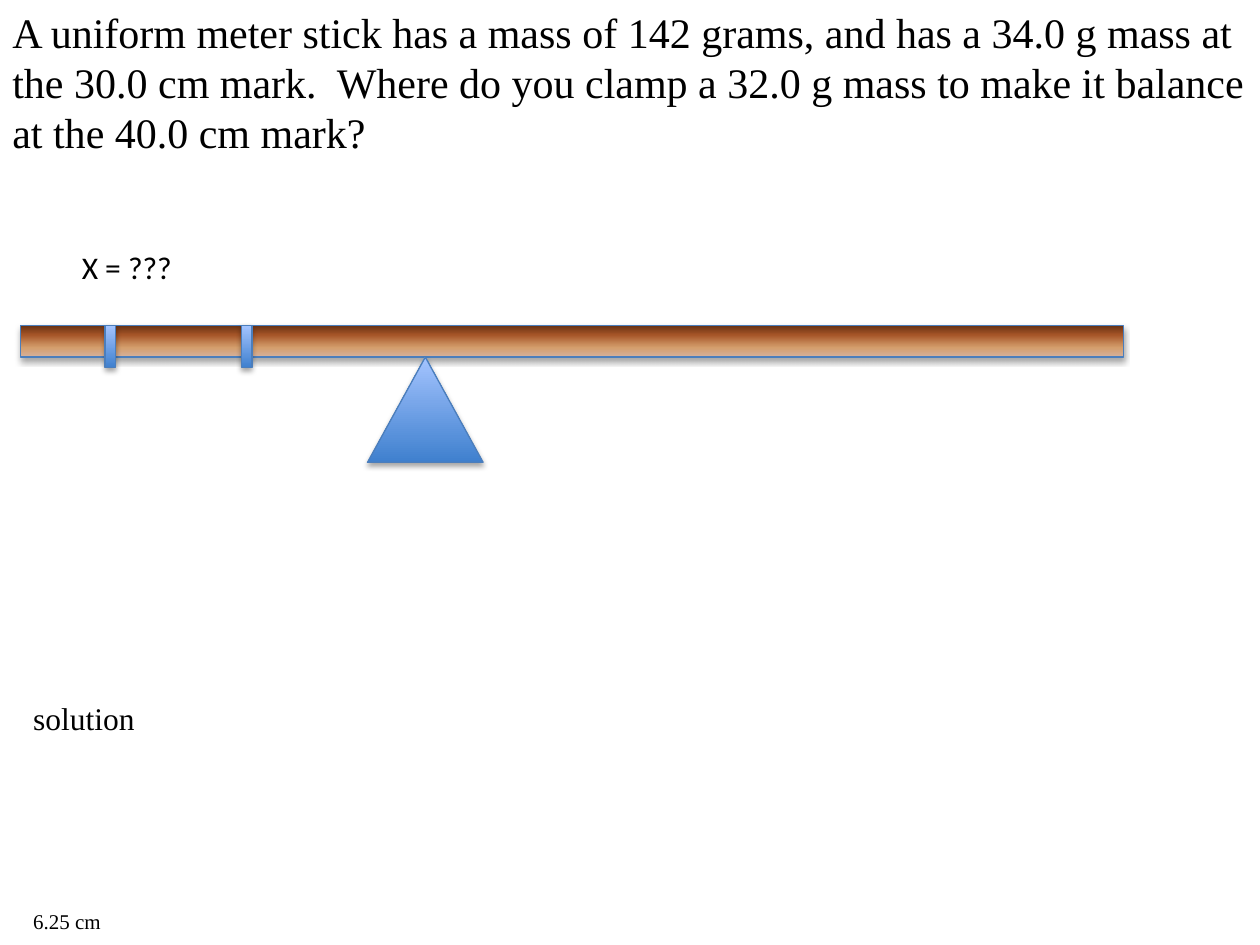
from lxml import etree
from pptx import Presentation
from pptx.dml.color import RGBColor
from pptx.enum import shapes, text
from pptx.oxml.ns import qn
from pptx.util import Cm, Pt

COLOURS = {"text": "000000", "outline": "4B7EBC", "shadow": "000000"}
GRADIENTS = {
    "wood": [(0, "D6B19C"), (30, "D49E6C"), (70, "A65528"), (100, "663012")],
    "blue": [(0, "3F80CE"), (100, "A4C4FF")],
}
SERIF = "Times New Roman"


def write_text(frame, content, *, size, font=SERIF, colour="text", wrap=True):
    frame.word_wrap = wrap
    frame.auto_size = text.MSO_AUTO_SIZE.SHAPE_TO_FIT_TEXT
    run = frame.paragraphs[0].add_run()
    run.text = content
    run.font.size = Pt(size)
    run.font.name = font
    run.font.color.rgb = RGBColor.from_string(COLOURS[colour])


def add_colour(parent, value):
    return etree.SubElement(parent, qn("a:srgbClr"), val=value)


class SlideBuilder:
    def __init__(self, slide):
        self.slide = slide

    def label(self, content, left, top, width, height, **style):
        box = self.slide.shapes.add_textbox(Cm(left), Cm(top), Cm(width), Cm(height))
        write_text(box.text_frame, content, **style)

    def solid(self, kind, gradient, left, top, width, height):
        shape = self.slide.shapes.add_shape(
            kind, Cm(left), Cm(top), Cm(width), Cm(height)
        )
        self.fill_gradient(shape, GRADIENTS[gradient])
        shape.line.color.rgb = RGBColor.from_string(COLOURS["outline"])
        shape.line.width = Pt(0.75)
        self.cast_shadow(shape)

    def fill_gradient(self, shape, stops):
        shape.fill.gradient()
        shape.fill.gradient_angle = 90
        stop_list = shape._element.spPr.find(".//" + qn("a:gsLst"))
        for stop in list(stop_list):
            stop_list.remove(stop)
        for position, colour in stops:
            stop = etree.SubElement(stop_list, qn("a:gs"), pos=str(position * 1000))
            add_colour(stop, colour)

    def cast_shadow(self, shape):
        shape.shadow.inherit = False
        effects = shape._element.spPr.find(qn("a:effectLst"))
        shadow = etree.SubElement(
            effects,
            qn("a:outerShdw"),
            blurRad=str(Pt(3.1)),
            dist=str(Pt(1.8)),
            dir="5400000",
            rotWithShape="0",
        )
        colour = add_colour(shadow, COLOURS["shadow"])
        etree.SubElement(colour, qn("a:alpha"), val="35000")


def main():
    presentation = Presentation()
    presentation.slide_width = Cm(25.4)
    presentation.slide_height = Cm(19.05)
    builder = SlideBuilder(presentation.slides.add_slide(presentation.slide_layouts[6]))

    builder.label(
        "A uniform meter stick has a mass of 142 grams, and has a 34.0 g mass at "
        "the 30.0 cm mark.  Where do you clamp a 32.0 g mass to make it balance "
        "at the 40.0 cm mark?",
        0, 0, 25.4, 3.33, size=24,
    )
    margin = 0.42
    builder.label("solution", margin, 13.97, 24.13, 1.03, size=18)
    builder.label("6.25 cm", margin, 18.2, 1.9, 0.76, size=12, wrap=False)

    stick_top, stick_height = 6.56, 0.64
    rectangle = shapes.MSO_SHAPE.RECTANGLE
    builder.solid(rectangle, "wood", margin, stick_top, 22.23, stick_height)
    for mass_left in (4.87, 2.12):
        builder.solid(rectangle, "blue", mass_left, stick_top, 0.21, 0.85)
    builder.solid(
        shapes.MSO_SHAPE.ISOSCELES_TRIANGLE,
        "blue", 7.41, stick_top + stick_height, 2.33, 2.12,
    )
    builder.label("X = ???", 1.4, 4.88, 2.36, 1.02, size=18, font="Calibri", wrap=False)

    presentation.save("out.pptx")


if __name__ == "__main__":
    main()
